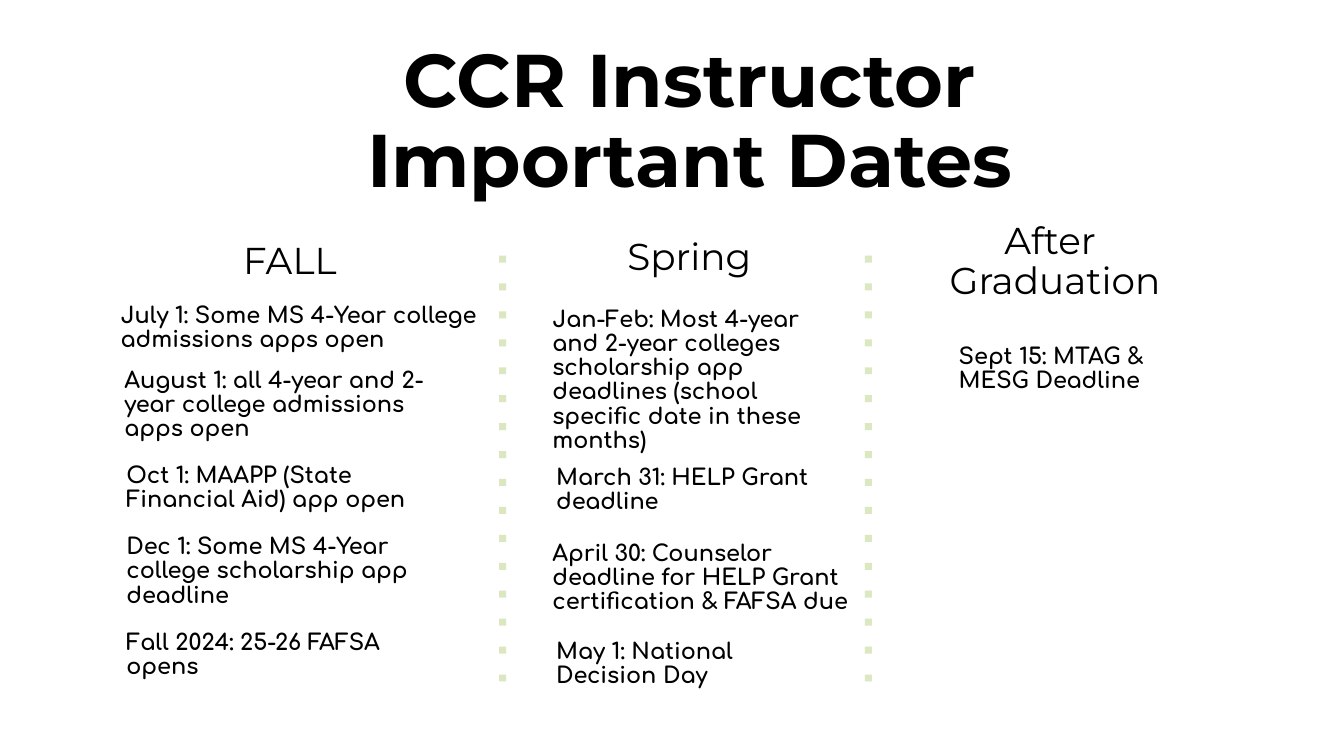
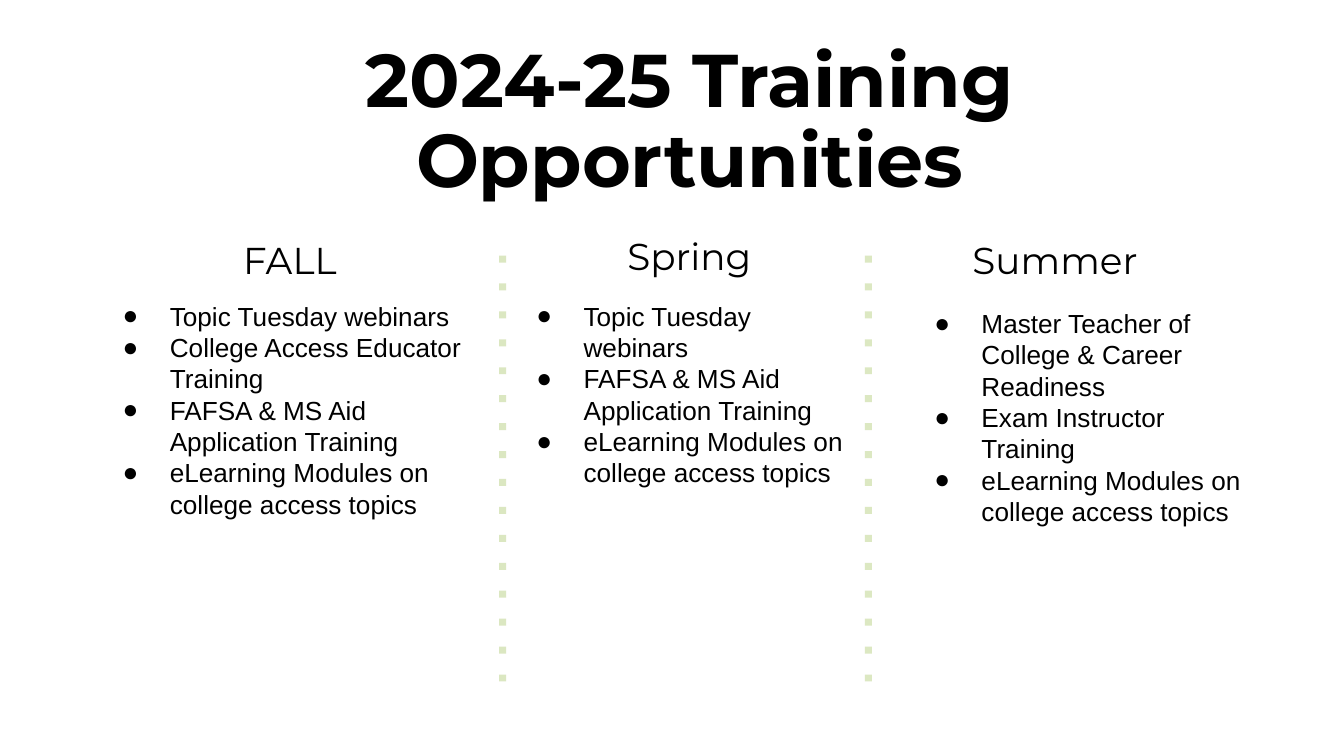
"""Build two slides of dates and training, each in three season columns."""
from lxml import etree
from pptx import Presentation
from pptx.dml.color import RGBColor
from pptx.enum import shapes, text
from pptx.oxml import ns
from pptx.util import Cm, Pt

BLACK = RGBColor(0x00, 0x00, 0x00)
LEAF = RGBColor(0x8C, 0xB2, 0x3A)
MOSS = RGBColor(0x8F, 0xB6, 0x3B)

HEAD = "Montserrat"
NOTE = "Comfortaa"
BODY = "Arial"

RULES = [(9.5, LEAF), (16.41, MOSS)]
HEADS = [(3.12, 4.47, 4.72, 0.97), (10.67, 4.4, 4.72, 0.97),
         (17.58, 4.37, 4.72, 1.19)]
LISTS = [(1.69, 5.42, 7.32, 7.59), (9.51, 5.42, 6.91, 7.59),
         (17.03, 5.56, 6.91, 7.59)]

DATES = [
    ((2.12, 5.55, 7.37, 1.32),
     "July 1: Some MS 4-Year college admissions apps open"),
    ((2.19, 6.99, 5.99, 1.35),
     "August 1: all 4-year and 2-year college admissions apps open"),
    ((2.23, 8.73, 5.92, 0.99),
     "Oct 1: MAAPP (State Financial Aid) app open"),
    ((2.23, 10.31, 5.92, 0.99),
     "Dec 1: Some MS 4-Year college scholarship app deadline"),
    ((2.23, 11.89, 5.92, 0.99),
     "Fall 2024: 25-26 FAFSA opens"),
    ((10.28, 6.47, 5.95, 1.45),
     "Jan-Feb: Most 4-year and 2-year colleges scholarship app deadlines "
     "(school specific date in these months)"),
    ((10.35, 8.78, 5.95, 0.99),
     "March 31: HELP Grant deadline"),
    ((10.28, 10.44, 5.95, 0.99),
     "April 30: Counselor deadline for HELP Grant certification & FAFSA due"),
    ((10.35, 12.06, 5.33, 0.99),
     "May 1: National Decision Day"),
    ((17.96, 6.48, 3.9, 0.99),
     "Sept 15: MTAG & MESG Deadline"),
]

TOPIC = "Topic Tuesday webinars"
AID = "FAFSA & MS Aid Application Training"
ONLINE = "eLearning Modules on college access topics"
COURSES = [
    [TOPIC, "College Access Educator Training", AID, ONLINE],
    [TOPIC, AID, ONLINE],
    ["Master Teacher of College & Career Readiness",
     "Exam Instructor Training", ONLINE],
]


def add_bullet(para):
    """Give a paragraph a hanging round bullet."""
    props = para._p.get_or_add_pPr()
    props.set("marL", str(Cm(1.27)))
    props.set("indent", str(Cm(-0.89)))
    color = etree.SubElement(props, ns.qn("a:buClr"))
    etree.SubElement(color, ns.qn("a:srgbClr"), val=str(BLACK))
    etree.SubElement(props, ns.qn("a:buFont"), typeface=BODY)
    etree.SubElement(props, ns.qn("a:buChar"), char="●")


def write(shape, lines, font=NOTE, size=12, bold=False, align="LEFT",
          anchor="MIDDLE", pad=(0.16, 0.08), space=0.9, bullet=False):
    """Fill a shape with formatted paragraphs."""
    frame = shape.text_frame
    frame.word_wrap = True
    frame.auto_size = text.MSO_AUTO_SIZE.NONE
    frame.vertical_anchor = text.MSO_ANCHOR[anchor]
    frame.margin_left = frame.margin_right = Cm(pad[0])
    frame.margin_top = frame.margin_bottom = Cm(pad[1])
    for num, line in enumerate(lines):
        para = frame.add_paragraph() if num else frame.paragraphs[0]
        para.alignment = text.PP_ALIGN[align]
        para.line_spacing = space
        if bullet:
            add_bullet(para)
        run = para.add_run()
        run.text = line
        run.font.name, run.font.size = font, Pt(size)
        run.font.bold = bold
        run.font.color.rgb = BLACK


def add_box(slide, area, lines, **form):
    """Add a text box at an area given in centimetres."""
    write(slide.shapes.add_textbox(*map(Cm, area)), lines, **form)


def add_rule(slide, left, color):
    """Draw a pale dotted line between two columns."""
    rule = slide.shapes.add_connector(
        shapes.MSO_CONNECTOR.STRAIGHT, Cm(left), Cm(4.83), Cm(left), Cm(12.88))
    rule.line.width = Pt(3.75)
    rule.line.color.rgb = color
    props = rule._element.spPr
    tint = props.find(".//" + ns.qn("a:srgbClr"))
    etree.SubElement(tint, ns.qn("a:alpha"), val="31000")
    line = props.find(ns.qn("a:ln"))
    etree.SubElement(line, ns.qn("a:prstDash"), val="dot")
    etree.SubElement(props, ns.qn("a:effectLst"))


def add_slide(deck, name, last):
    """Add a slide with its title, column rules and season heads."""
    slide = deck.slides.add_slide(deck.slide_layouts[5])
    title = slide.shapes.title
    title.left, title.top, title.width, title.height = map(
        Cm, (4.82, 0.68, 16.43, 2.77))
    write(title, [name], font=HEAD, size=40, bold=True, align="CENTER",
          anchor="TOP", pad=(0.25, 0.13))
    for left, color in RULES:
        add_rule(slide, left, color)
    for area, lines in zip(HEADS, (["FALL"], ["Spring"], last)):
        add_box(slide, area, lines, font=HEAD, size=20, align="CENTER")
    return slide


def main():
    """Build and save the deck."""
    deck = Presentation()
    deck.slide_width, deck.slide_height = Cm(25.4), Cm(14.29)
    slide = add_slide(deck, "CCR Instructor Important Dates",
                      ["After ", "Graduation"])
    for area, note in DATES:
        add_box(slide, area, [note], bold=True)
    slide = add_slide(deck, "2024-25 Training Opportunities", ["Summer"])
    for area, items in zip(LISTS, COURSES):
        add_box(slide, area, items, font=BODY, size=14, anchor="TOP",
                pad=(0.25, 0.25), space=1.0, bullet=True)
    deck.save("out.pptx")


if __name__ == "__main__":
    main()
